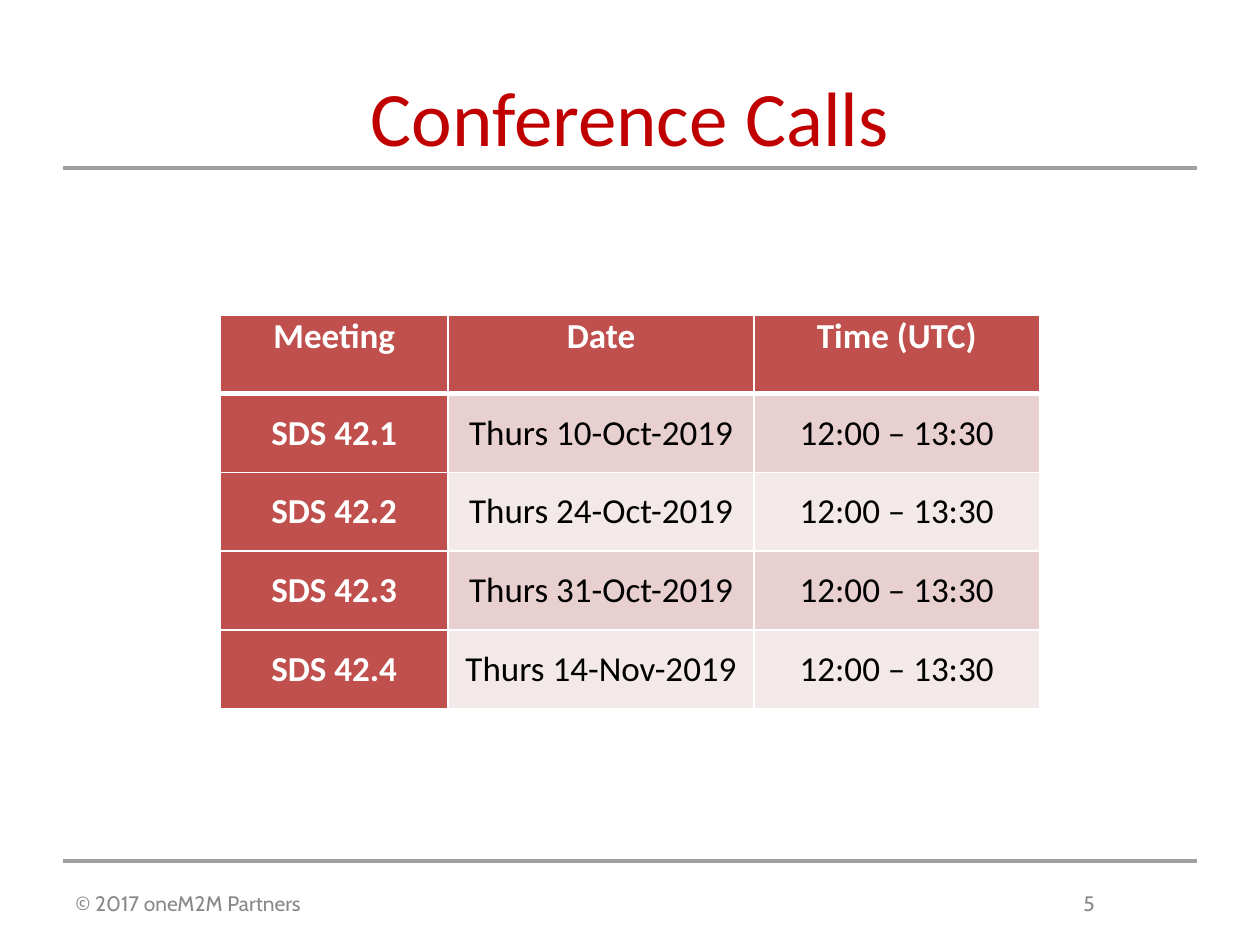
import pptx
import pptx.util
import pptx.dml.color
import pptx.enum.shapes
import pptx.enum.text
import pptx.oxml.ns
from lxml import etree

Pt = pptx.util.Pt
ALIGN = pptx.enum.text.PP_ALIGN
ANCHOR = pptx.enum.text.MSO_ANCHOR
qn = pptx.oxml.ns.qn

HUES = {
    "title": "C00000", "rule": "A0A0A3", "foot": "898989",
    "head": "C0504D", "odd": "E8D0D0", "even": "F4E9E9",
    "white": "FFFFFF", "black": "000000",
}
COLS = [130, 175, 163]
ROW = 45
TIME = "12:00 – 13:30"
DATES = ["10-Oct-2019", "24-Oct-2019", "31-Oct-2019", "14-Nov-2019"]


def hue(name):
    return pptx.dml.color.RGBColor.from_string(HUES[name])


def style(para, face, size, color, bold=False):
    font = para.font
    font.name, font.size, font.bold = face, Pt(size), bold
    font.color.rgb = hue(color)


def add_rule(slide, y):
    line = slide.shapes.add_connector(
        pptx.enum.shapes.MSO_CONNECTOR.STRAIGHT, Pt(36), Pt(y), Pt(684), Pt(y))
    line.line.color.rgb = hue("rule")
    line.line.width = Pt(1.75)
    etree.SubElement(line._element.spPr, qn("a:effectLst"))


def set_title(slide, text):
    title = slide.shapes.title
    title.left, title.top, title.width, title.height = Pt(36), Pt(36), Pt(648), Pt(90)
    frame = title.text_frame
    frame.text = text
    frame.vertical_anchor = ANCHOR.TOP
    para = frame.paragraphs[0]
    para.alignment = ALIGN.CENTER
    style(para, "Calibri", 44, "title")


def add_foot(slide, text, page):
    box = slide.shapes.add_textbox(Pt(36), Pt(492), Pt(648), Pt(48))
    frame = box.text_frame
    frame.word_wrap = True
    frame.vertical_anchor = ANCHOR.MIDDLE
    para = frame.paragraphs[0]
    para.text = f"{text}\t{page}"
    # One tab stop carries the page number
    tabs = etree.SubElement(para._p.get_or_add_pPr(), qn("a:tabLst"))
    etree.SubElement(tabs, qn("a:tab"), pos=str(Pt(576)), algn="l")
    style(para, "Cabin", 12, "foot")


def add_edges(cell, row):
    props = cell._tc.get_or_add_tcPr()
    thick = {"lnT": row == 1, "lnB": row == 0}
    for side in ("lnL", "lnR", "lnT", "lnB"):
        width = Pt(3 if thick.get(side) else 1)
        edge = etree.SubElement(props, qn("a:" + side), w=str(width))
        fill = etree.SubElement(edge, qn("a:solidFill"))
        etree.SubElement(fill, qn("a:srgbClr"), val=HUES["white"])


def fill_cell(cell, text, row, col):
    label = row == 0 or col == 0
    add_edges(cell, row)
    cell.fill.solid()
    cell.fill.fore_color.rgb = hue("head" if label else "odd" if row % 2 else "even")
    cell.margin_left = cell.margin_right = Pt(5)
    cell.margin_top = cell.margin_bottom = Pt(0)
    cell.vertical_anchor = ANCHOR.MIDDLE if row else ANCHOR.TOP
    cell.text = text
    para = cell.text_frame.paragraphs[0]
    para.alignment = ALIGN.CENTER
    style(para, "Calibri", 20, "white" if label else "black", label)


def add_calls(slide, rows):
    table = slide.shapes.add_table(
        len(rows), len(COLS), Pt(126), Pt(180),
        Pt(sum(COLS)), Pt(ROW * len(rows))).table
    for col, width in enumerate(COLS):
        table.columns[col].width = Pt(width)
    for row, texts in enumerate(rows):
        table.rows[row].height = Pt(ROW)
        for col, text in enumerate(texts):
            fill_cell(table.cell(row, col), text, row, col)


def main():
    deck = pptx.Presentation()
    deck.slide_width, deck.slide_height = Pt(720), Pt(540)
    slide = deck.slides.add_slide(deck.slide_layouts[5])

    # Frame: rules, title and footer
    for y in (492, 96):
        add_rule(slide, y)
    set_title(slide, "Conference Calls")
    add_foot(slide, "© 2017 oneM2M Partners", 5)

    # Schedule of calls
    rows = [("Meeting", "Date", "Time (UTC)")]
    rows += [(f"SDS 42.{n}", f"Thurs {date}", TIME)
             for n, date in enumerate(DATES, 1)]
    add_calls(slide, rows)

    deck.save("out.pptx")


if __name__ == "__main__":
    main()
